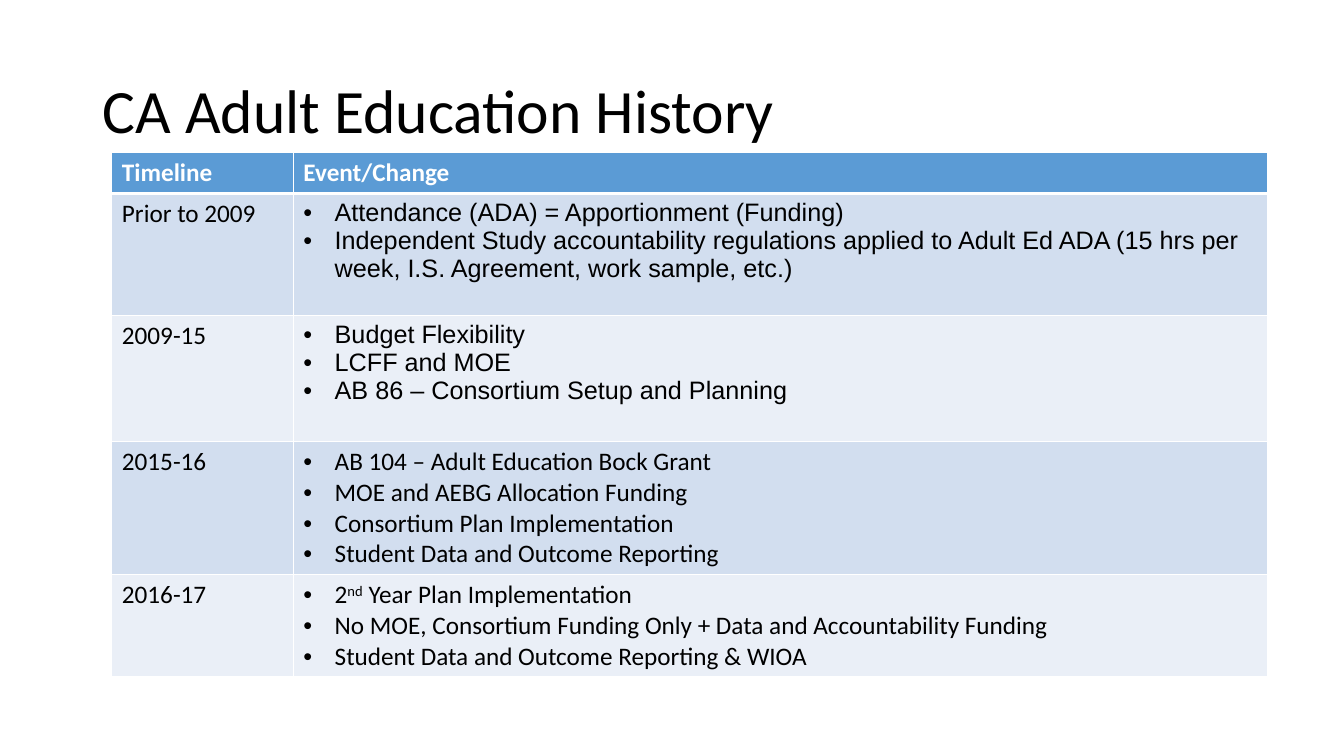
import pptx
import pptx.util
import pptx.dml.color
import pptx.enum.text
import lxml.etree

Inches = pptx.util.Inches
RGB = pptx.dml.color.RGBColor
BLACK = RGB(0x00, 0x00, 0x00)
WHITE = RGB(0xFF, 0xFF, 0xFF)
BLUE = RGB(0x5B, 0x9B, 0xD5)
BANDS = [RGB(0xD2, 0xDE, 0xEF), RGB(0xEA, 0xEF, 0xF7)]
NS = "http://schemas.openxmlformats.org/drawingml/2006/main"


def write(frame, text, size=18, font="Calibri", color=BLACK, bold=False, bullet=False):
    for i, line in enumerate(text.split("\n")):
        para = frame.add_paragraph() if i else frame.paragraphs[0]
        para.alignment = pptx.enum.text.PP_ALIGN.LEFT
        if bullet:
            props = para._p.get_or_add_pPr()
            props.set("marL", str(Inches(0.31)))
            props.set("indent", str(-Inches(0.31)))
            lxml.etree.SubElement(props, f"{{{NS}}}buFont", typeface="Arial")
            lxml.etree.SubElement(props, f"{{{NS}}}buChar", char="•")
        for j, part in enumerate(line.split("^")):
            run = para.add_run()
            run.text = part
            run.font.size = pptx.util.Pt(size)
            run.font.name = font
            run.font.bold = bold
            run.font.color.rgb = color
            if j % 2:
                run.font._element.set("baseline", "30000")


def edge(cell, head):
    props = cell._tc.get_or_add_tcPr()
    for side in "LRTB":
        wide = 3 if (head and side == "B") or (not head and side == "T" and cell in firsts) else 1
        line = lxml.etree.SubElement(props, f"{{{NS}}}ln{side}", w=str(pptx.util.Pt(wide)))
        fill = lxml.etree.SubElement(line, f"{{{NS}}}solidFill")
        lxml.etree.SubElement(fill, f"{{{NS}}}srgbClr", val=str(WHITE))


deck = pptx.Presentation()
deck.slide_width = Inches(13.33)
deck.slide_height = Inches(7.5)
slide = deck.slides.add_slide(deck.slide_layouts[5])

title = slide.shapes.title
title.left, title.top = Inches(0.92), Inches(0.4)
title.width, title.height = Inches(11.5), Inches(1.45)
frame = title.text_frame
frame.auto_size = pptx.enum.text.MSO_AUTO_SIZE.NONE
frame.vertical_anchor = pptx.enum.text.MSO_ANCHOR.MIDDLE
write(frame, "CA Adult Education History", size=44)
frame.paragraphs[0].line_spacing = 0.9

rows = [
    (0.41, "Calibri", "Timeline", "Event/Change"),
    (1.21, "Arial", "Prior to 2009",
     "Attendance (ADA) = Apportionment (Funding)\n"
     "Independent Study accountability regulations applied to Adult Ed ADA "
     "(15 hrs per week, I.S. Agreement, work sample, etc.)"),
    (1.25, "Arial", "2009-15",
     "Budget Flexibility\nLCFF and MOE\nAB 86 – Consortium Setup and Planning"),
    (1.32, "Calibri", "2015-16",
     "AB 104 – Adult Education Bock Grant\nMOE and AEBG Allocation Funding\n"
     "Consortium Plan Implementation\nStudent Data and Outcome Reporting"),
    (1.01, "Calibri", "2016-17",
     "2^nd^ Year Plan Implementation\n"
     "No MOE, Consortium Funding Only + Data and Accountability Funding\n"
     "Student Data and Outcome Reporting & WIOA"),
]
high = sum(row[0] for row in rows)
table = slide.shapes.add_table(
    len(rows), 2, Inches(1.11), Inches(1.51), Inches(11.46), Inches(high)).table
table.columns[0].width = Inches(1.8)
table.columns[1].width = Inches(9.66)
firsts = [table.cell(1, col) for col in range(2)]

for r, (tall, font, *texts) in enumerate(rows):
    table.rows[r].height = Inches(tall)
    head = r == 0
    for c, text in enumerate(texts):
        cell = table.cell(r, c)
        edge(cell, head)
        cell.fill.solid()
        cell.fill.fore_color.rgb = BLUE if head else BANDS[(r - 1) % 2]
        write(cell.text_frame, text, font=font if c else "Calibri",
              color=WHITE if head else BLACK, bold=head, bullet=c == 1 and not head)

deck.save("out.pptx")
